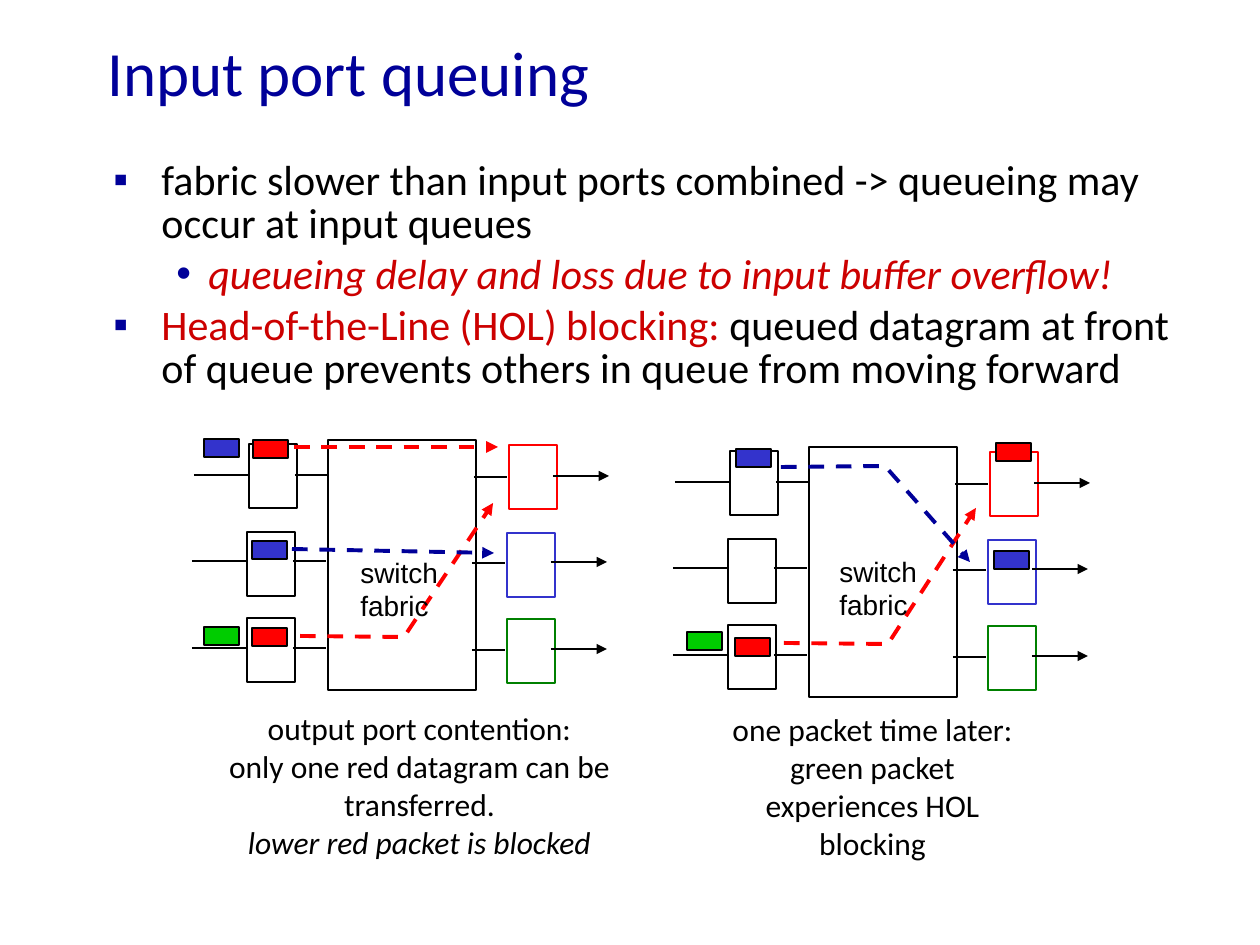
from lxml.etree import SubElement
from pptx import Presentation
from pptx.dml.color import RGBColor
from pptx.enum.dml import MSO_LINE
from pptx.enum.shapes import MSO_CONNECTOR, MSO_SHAPE
from pptx.enum.text import MSO_ANCHOR, PP_ALIGN
from pptx.oxml.ns import qn
from pptx.util import Emu, Pt

SCALE = 914400 / 126  # EMU per px

BLACK = RGBColor(0x00, 0x00, 0x00)
WHITE = RGBColor(0xFF, 0xFF, 0xFF)
NAVY = RGBColor(0x00, 0x00, 0x99)
CRIMSON = RGBColor(0xCC, 0x00, 0x00)
RED = RGBColor(0xFF, 0x00, 0x00)
BLUE = RGBColor(0x33, 0x33, 0xCC)
GREEN = RGBColor(0x00, 0x80, 0x00)
LIME = RGBColor(0x00, 0xCC, 0x00)

# Paragraphs are lists of (text, colour, italic); "\n" is a line break
TITLE = [[("Input port queuing", NAVY, False)]]
BODY = [
    [("fabric slower than input ports combined -> queueing may occur at input queues",
      BLACK, False)],
    [("queueing delay and loss due to input buffer overflow!", CRIMSON, True)],
    [("Head-of-the-Line (HOL) blocking:", CRIMSON, False),
     (" queued datagram at front of queue prevents others in queue from moving forward",
      BLACK, False)],
]
BULLETS = [("▪", 48, 48), ("•", 95, 32), ("▪", 48, 48)]  # mark, indent, hanging
FABRIC_LABEL = [[("switch", BLACK, False)], [("fabric", BLACK, False)]]

# Port rows, relative to the switch fabric: x shift, box top, wire y, output colour
ROWS = [(0, 4, 35, RED), (-2, 92, 121, BLUE), (-2, 178, 208, GREEN)]
FABRIC_SIZE = (148, 250)
PORT_SIZE = (48, 64)
PACKET_SIZE = (35, 18)
INPUT_X, OUTPUT_X = -79, 181
# Wires: start x, end x, y offset, arrowhead
WIRES = [(146, 179, 2, False), (-33, 0, 0, False),
         (-134, -79, 0, False), (225, 281, 1, True)]

STAGES = [
    {"fabric": (328, 440),
     "packets": [(253, 440, RED), (252, 541, BLUE), (252, 628, RED),
                 (204, 439, BLUE), (204, 627, LIME)],
     "flows": [(RED, [(294, 447), (498, 447)]),
               (RED, [(300, 636), (404, 637), (493, 503)]),
               (NAVY, [(292, 549), (494, 553)])],
     "label": (348, 549),
     "caption_box": (186, 703, 467, 164),
     "caption": [[("output port contention:", BLACK, False)],
                 [("only one red datagram can be transferred.", BLACK, False),
                  ("\n", BLACK, False),
                  ("lower red packet is blocked", BLACK, True)]]},
    {"fabric": (809, 447),
     "packets": [(996, 443, RED), (736, 449, BLUE), (735, 638, RED),
                 (687, 632, LIME), (994, 551, BLUE)],
     "flows": [(RED, [(784, 643), (888, 644), (976, 508)]),
               (NAVY, [(781, 467), (885, 466), (970, 562)])],
     "label": (827, 548),
     "caption_box": (719, 704, 307, 164),
     "caption": [[("one packet time later: green packet experiences HOL blocking",
                   BLACK, False)]]},
]


def px(value):
    return Emu(round(value * SCALE))


def add_text(page, frame, paragraphs, size, font="Calibri", align=PP_ALIGN.LEFT,
             wrap=True):
    box = page.shapes.add_textbox(*map(px, frame))
    box.text_frame.word_wrap = wrap
    for index, spans in enumerate(paragraphs):
        para = box.text_frame.paragraphs[0] if index == 0 else box.text_frame.add_paragraph()
        para.alignment = align
        for text, colour, italic in spans:
            if text == "\n":
                para.add_line_break()
                continue
            span = para.add_run()
            span.text = text
            span.font.name = font
            span.font.size = Pt(size)
            span.font.italic = italic
            span.font.color.rgb = colour
    return box


def add_bullet(para, mark, indent, hanging):
    para.line_spacing = 0.85
    para.space_before = Pt(4.8)
    properties = para._p.get_or_add_pPr()
    properties.set("marL", str(px(indent)))
    properties.set("indent", str(px(-hanging)))
    colour = SubElement(properties, qn("a:buClr"))
    SubElement(colour, qn("a:srgbClr"), val=str(NAVY))
    SubElement(properties, qn("a:buFont"), typeface="Arial")
    SubElement(properties, qn("a:buChar"), char=mark)


def add_box(page, x, y, size, fill, line=BLACK, width=0.75):
    box = page.shapes.add_shape(MSO_SHAPE.RECTANGLE, *map(px, (x, y, *size)))
    box.shadow.inherit = False
    box.fill.solid()
    box.fill.fore_color.rgb = fill
    box.line.color.rgb = line
    box.line.width = Pt(width)


def add_line(page, points, colour=BLACK, width=1.5, dashed=False, arrow=True):
    """Straight connector for two points, open outline for more."""
    if len(points) == 2:
        line = page.shapes.add_connector(
            MSO_CONNECTOR.STRAIGHT, *map(px, points[0] + points[1]))
        SubElement(line._element.spPr, qn("a:effectLst"))
    else:
        builder = page.shapes.build_freeform(*points[0], scale=SCALE)
        builder.add_line_segments(points[1:], close=False)
        line = builder.convert_to_shape()
        line.shadow.inherit = False
        line.fill.background()
    line.line.color.rgb = colour
    line.line.width = Pt(width)
    if dashed:
        line.line.dash_style = MSO_LINE.DASH
    if arrow:
        SubElement(line.line._get_or_add_ln(), qn("a:tailEnd"), type="triangle")


def add_stage(page, stage):
    left, top = stage["fabric"]
    add_box(page, left, top, FABRIC_SIZE, WHITE)
    # Ports and wires
    for shift, box_top, wire_y, colour in ROWS:
        x = left + shift
        add_box(page, x + INPUT_X, top + box_top, PORT_SIZE, WHITE)
        add_box(page, x + OUTPUT_X, top + box_top + 1, PORT_SIZE, WHITE, colour, 1.5)
        for start, end, drop, arrow in WIRES:
            y = top + wire_y + drop
            add_line(page, [(x + start, y), (x + end, y)], arrow=arrow)
    # Packets, their flows and the wording
    for x, y, colour in stage["packets"]:
        add_box(page, x, y, PACKET_SIZE, colour)
    for colour, points in stage["flows"]:
        add_line(page, points, colour, 2.25, dashed=True)
    add_text(page, (*stage["label"], 103, 81), FABRIC_LABEL, 16, "Arial", wrap=False)
    add_text(page, stage["caption_box"], stage["caption"], 18, align=PP_ALIGN.CENTER)


def main():
    deck = Presentation()
    deck.slide_width, deck.slide_height = px(1260), px(945)
    page = deck.slides.add_slide(deck.slide_layouts[6])

    # Heading and bullets
    title = add_text(page, (95, 40, 1071, 63), TITLE, 36)
    title.text_frame.vertical_anchor = MSO_ANCHOR.MIDDLE
    body = add_text(page, (101, 155, 1116, 365), BODY, 24)
    for para, bullet in zip(body.text_frame.paragraphs, BULLETS):
        add_bullet(para, *bullet)

    # The two moments of the switch
    for stage in STAGES:
        add_stage(page, stage)
    deck.save("out.pptx")


if __name__ == "__main__":
    main()
